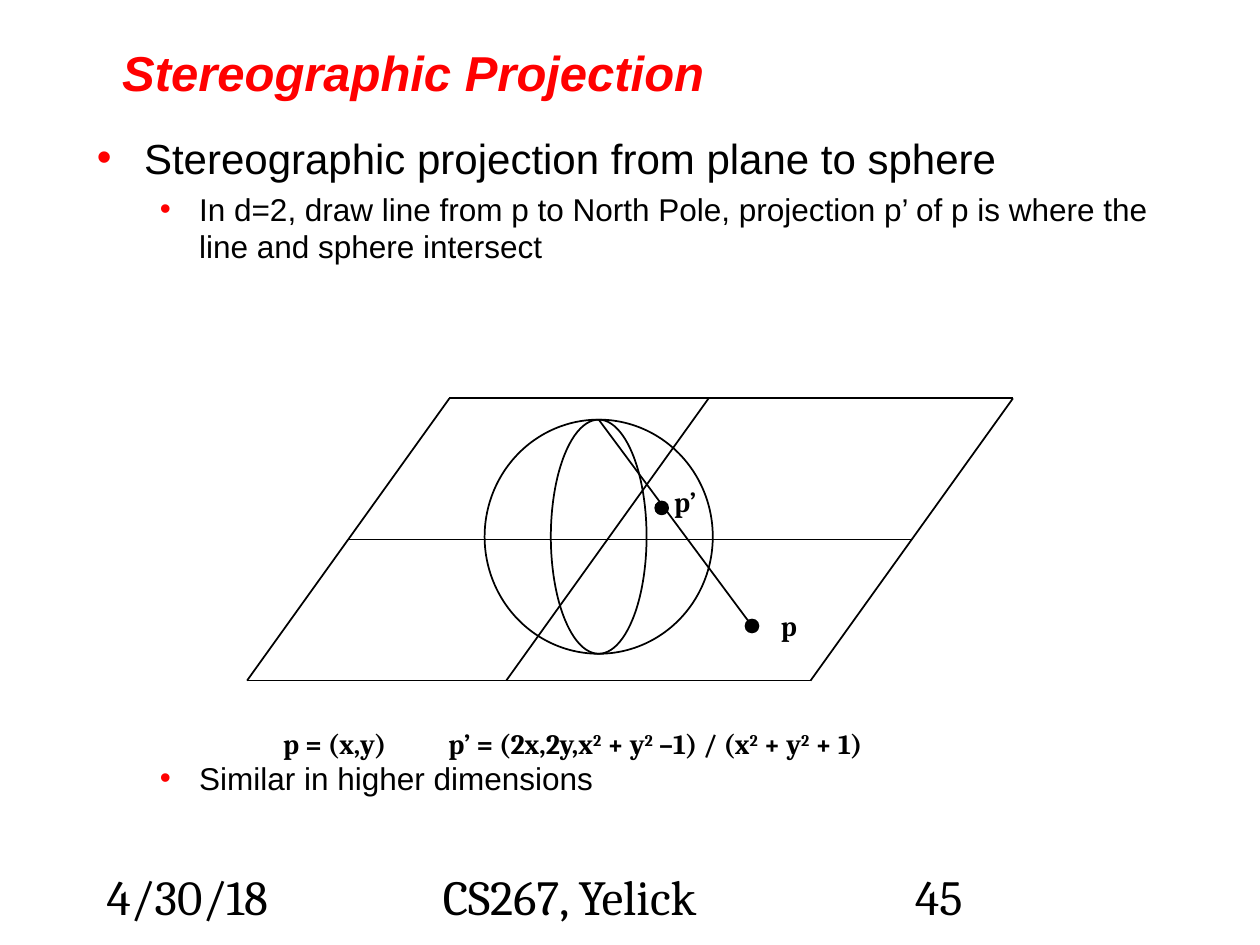
from lxml import etree
from pptx import Presentation
from pptx import util as u
from pptx.dml.color import RGBColor
from pptx.enum import shapes, text
from pptx.oxml.ns import qn

# Content
TITLE = "Stereographic Projection"
BULLETS = [  # level, space before in points, text
    (0, 5, "Stereographic projection from plane to sphere"),
    (1, 4, "In d=2, draw line from p to North Pole, projection p’ of p is where the "
           "line and sphere intersect"),
    (1, 282, "Similar in higher dimensions"),
]
FORMULA = [  # text, superscript
    ("p = (x,y)\tp’ = (2x,2y,x", False), ("2", True), (" + y", False), ("2", True),
    (" –1) / (x", False), ("2", True), (" + y", False), ("2", True), (" + 1)", False),
]
FOOTER = [(1.9, 5.3, "4/30/18"), (8.68, 8.05, "CS267, Yelick"), (18.2, 5.3, "45")]

# Geometry in centimetres
PLANE = {"left": 4.98, "bottom": 13.72, "width": 11.36, "skew": 4.08, "depth": 5.69}
ACROSS, ALONG = (0, 0.5, 1), (0, 0.46, 1)
SPHERE = {"x": 12.07, "top": 8.46, "height": 4.72, "widths": (1.93, 4.6)}
DOT = 0.26
POINTS = [  # dot centre, label corner, label
    ((13.34, 10.24), (13.34, 9.65), "p’"),
    ((15.16, 12.62), (15.49, 12.14), "p"),
]
FORMULA_AT, FORMULA_TAB = (5.46, 14.53, 13.8, 0.94), 3.33
INDENTS = [(0.95, 0.95), (2.06, 0.79)]  # margin, hanging

THEME = {
    "ink": RGBColor(0, 0, 0), "accent": RGBColor(255, 0, 0),
    "sans": "Arial", "serif": "Cambria",
    "title": 28, "levels": (24, 18), "label": 16, "footer": 28, "line": 1,
}


def style(para, face, size, color="ink", bold=False, italic=False):
    font = para.font
    font.name, font.size = THEME[face], u.Pt(size)
    font.color.rgb = THEME[color]
    font.bold, font.italic = bold, italic


def place(shape, left, top, width, height):
    shape.left, shape.top = u.Cm(left), u.Cm(top)
    shape.width, shape.height = u.Cm(width), u.Cm(height)


def add_text(page, at, size, spans, bold=False, tab=None):
    box = page.shapes.add_textbox(*map(u.Cm, at))
    box.text_frame.word_wrap = True
    para = box.text_frame.paragraphs[0]
    if tab:
        stops = etree.SubElement(para._p.get_or_add_pPr(), qn("a:tabLst"))
        etree.SubElement(stops, qn("a:tab"), pos=str(u.Cm(tab)), algn="l")
    style(para, "serif", size, bold=bold)
    for words, raised in spans:
        span = para.add_run()
        span.text = words
        if raised:
            span._r.get_or_add_rPr().set("baseline", "30000")


def add_line(page, start, end):
    line = page.shapes.add_connector(
        shapes.MSO_CONNECTOR.STRAIGHT, *map(u.Cm, (*start, *end)))
    line.line.color.rgb = THEME["ink"]
    line.line.width = u.Pt(THEME["line"])
    etree.SubElement(line._element.spPr, qn("a:effectLst"))


def add_ellipse(page, center, width, height, filled=False):
    x, y = center
    oval = page.shapes.add_shape(
        shapes.MSO_SHAPE.OVAL,
        *map(u.Cm, (x - width / 2, y - height / 2, width, height)))
    oval.shadow.inherit = False
    oval.line.color.rgb = THEME["ink"]
    oval.line.width = u.Pt(THEME["line"])
    if filled:
        oval.fill.solid()
        oval.fill.fore_color.rgb = THEME["ink"]
    else:
        oval.fill.background()


def add_bullet(para, level):
    margin, hanging = INDENTS[level]
    props = para._p.get_or_add_pPr()
    props.set("marL", str(u.Cm(margin)))
    props.set("indent", str(-u.Cm(hanging)))
    color = etree.SubElement(props, qn("a:buClr"))
    etree.SubElement(color, qn("a:srgbClr"), val=str(THEME["accent"]))
    etree.SubElement(props, qn("a:buFont"), typeface=THEME["sans"])
    etree.SubElement(props, qn("a:buChar"), char="•")


def fill_placeholders(page):
    title, body = page.placeholders
    place(title, 2.21, 0.86, 19, 1.17)
    title.text_frame.text = TITLE
    title.text_frame.auto_size = text.MSO_AUTO_SIZE.NONE
    title.text_frame.vertical_anchor = text.MSO_ANCHOR.MIDDLE
    heading = title.text_frame.paragraphs[0]
    heading.alignment = text.PP_ALIGN.LEFT
    style(heading, "sans", THEME["title"], "accent", bold=True, italic=True)

    place(body, 1.7, 2.54, 22.23, 14.71)
    frame = body.text_frame
    frame.auto_size = text.MSO_AUTO_SIZE.NONE
    frame.text = "\n".join(words for _, _, words in BULLETS)
    for para, (level, gap, _) in zip(frame.paragraphs, BULLETS):
        para.level = level
        add_bullet(para, level)
        para.space_before = u.Pt(gap)
        style(para, "sans", THEME["levels"][level])


def draw_plane(page):
    def corner(along, across):
        return (PLANE["left"] + along * PLANE["width"] + across * PLANE["skew"],
                PLANE["bottom"] - across * PLANE["depth"])

    for across in ACROSS:
        add_line(page, corner(0, across), corner(1, across))
    for along in ALONG:
        add_line(page, corner(along, 0), corner(along, 1))


def draw_projection(page):
    x, top, height = SPHERE["x"], SPHERE["top"], SPHERE["height"]
    for width in SPHERE["widths"]:
        add_ellipse(page, (x, top + height / 2), width, height)
    add_line(page, (x, top), POINTS[-1][0])
    for center, corner, name in POINTS:
        add_ellipse(page, center, DOT, DOT, filled=True)
        add_text(page, (*corner, 1.3, 0.94), THEME["label"], [(name, False)], bold=True)


def main():
    deck = Presentation()
    deck.slide_width, deck.slide_height = u.Cm(25.4), u.Cm(19.05)
    page = deck.slides.add_slide(deck.slide_layouts[1])
    fill_placeholders(page)
    draw_plane(page)
    draw_projection(page)
    add_text(page, FORMULA_AT, THEME["label"], FORMULA, bold=True, tab=FORMULA_TAB)
    for left, width, words in FOOTER:
        add_text(page, (left, 17.35, width, 1.27), THEME["footer"], [(words, False)])
    deck.save("out.pptx")


if __name__ == "__main__":
    main()
